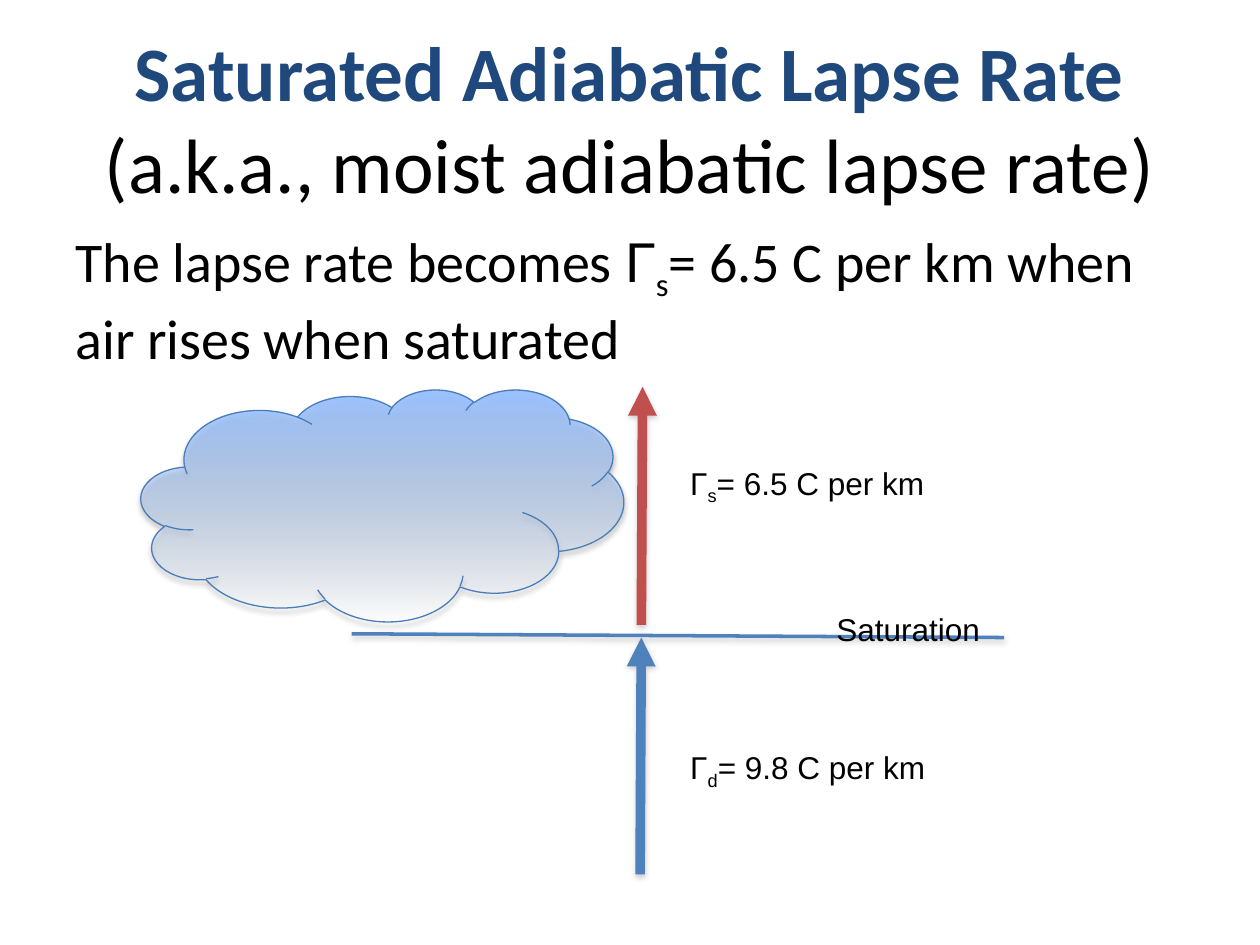
from lxml import etree
from pptx import Presentation
from pptx import util as u
from pptx.dml.color import RGBColor
from pptx.enum import shapes, text
from pptx.oxml.ns import qn

BLACK = RGBColor(0x00, 0x00, 0x00)
NAVY = RGBColor(0x1F, 0x49, 0x7D)
BLUE = RGBColor(0x4F, 0x81, 0xBD)
RED = RGBColor(0xC0, 0x50, 0x4D)
CLOUD_TOP = RGBColor(0x9B, 0xC1, 0xFF)
CLOUD_BASE = RGBColor(0xB9, 0xCD, 0xE5)
CLOUD_EDGE = RGBColor(0x4A, 0x7E, 0xBB)


def add_shadow(shape, colour, opacity, distance):
    """Soft shadow straight down; distance in points, opacity in percent."""
    effects = etree.SubElement(shape._element.spPr, qn("a:effectLst"))
    shadow = etree.SubElement(
        effects, qn("a:outerShdw"), blurRad=str(u.Pt(3.1)),
        dist=str(u.Pt(distance)), dir="5400000", rotWithShape="0")
    tint = etree.SubElement(shadow, qn("a:srgbClr"), val=str(colour))
    etree.SubElement(tint, qn("a:alpha"), val=str(opacity * 1000))


def add_text(slide, box, runs, frame_format, alignment=text.PP_ALIGN.LEFT):
    """Each run is (text, font values, baseline shift in percent)."""
    shape = slide.shapes.add_textbox(*map(u.Inches, box))
    for name, value in frame_format.items():
        setattr(shape.text_frame, name, value)
    paragraph = shape.text_frame.paragraphs[0]
    paragraph.alignment = alignment
    for index, (words, font_format, shift) in enumerate(runs):
        if words == "\n":
            paragraph.add_line_break()
            continue
        run = paragraph.add_run()
        run.text = words
        for name, value in font_format.items():
            if name == "colour":
                run.font.color.rgb = value
            else:
                setattr(run.font, name, value)
        if shift:
            run._r.get_or_add_rPr().set("baseline", str(shift * 1000))


def add_title(slide, box):
    font = {"name": "Calibri", "size": u.Pt(44)}
    runs = [
        ("Saturated Adiabatic Lapse Rate", {**font, "bold": True, "colour": NAVY}, 0),
        ("\n", {}, 0),
        ("(a.k.a., moist adiabatic lapse rate)", {**font, "colour": BLACK}, 0),
    ]
    frame_format = {"word_wrap": True, "vertical_anchor": text.MSO_ANCHOR.MIDDLE}
    add_text(slide, box, runs, frame_format, text.PP_ALIGN.CENTER)


def add_body(slide, box):
    font = {"name": "Calibri", "size": u.Pt(32), "colour": BLACK}
    runs = [
        ("The lapse rate becomes ", font, 0),
        ("Γ", {**font, "name": "Arial"}, 0),
        ("s", font, -25),
        ("= 6.5 C per km when air rises when saturated", font, 0),
    ]
    add_text(slide, box, runs, {"word_wrap": True})


def add_label(slide, box, *parts):
    """Parts alternate between plain text and subscript."""
    font = {"name": "Arial", "size": u.Pt(18), "colour": BLACK}
    runs = [(part, font, -25 * (index % 2)) for index, part in enumerate(parts)]
    add_text(slide, box, runs, {"word_wrap": False})


def add_line(slide, start, end, colour, width, arrow=False):
    line = slide.shapes.add_connector(
        shapes.MSO_CONNECTOR.STRAIGHT, *map(u.Inches, start + end))
    line.line.color.rgb = colour
    line.line.width = u.Pt(width)
    if arrow:
        etree.SubElement(line.line._get_or_add_ln(), qn("a:tailEnd"), type="triangle")
    add_shadow(line, RGBColor(0x80, 0x80, 0x80), 38, 1.6)


def add_cloud(slide, box):
    cloud = slide.shapes.add_shape(shapes.MSO_SHAPE.CLOUD, *map(u.Inches, box))
    cloud.fill.gradient()
    cloud.fill.gradient_angle = 270
    for stop, colour in zip(cloud.fill.gradient_stops, (CLOUD_TOP, CLOUD_BASE)):
        stop.color.rgb = colour
    # The base of the cloud fades out
    base = cloud._element.spPr.findall(".//" + qn("a:gs"))[-1][0]
    etree.SubElement(base, qn("a:alpha"), val="0")
    cloud.line.color.rgb = CLOUD_EDGE
    cloud.line.width = u.Pt(0.75)
    add_shadow(cloud, BLACK, 35, 1.8)


def add_diagram(slide, box):
    """Rising air below and above the saturation level."""
    left, top, width, height = box
    axis = left + 3.97
    level = top + 1.98
    label_left = left + 4.26
    # Dry and saturated ascent
    add_line(slide, (axis - 0.01, top + height), (axis, level + 0.01), BLUE, 5.5, True)
    add_line(slide, (axis, level - 0.09), (axis + 0.01, top), RED, 5.5, True)
    # Saturation level
    add_line(slide, (left + 1.67, level - 0.02), (left + width, level + 0.01), BLUE, 2)
    # Labels
    add_label(slide, (left + 5.42, level - 0.26, 1.35, 0.4), "Saturation")
    add_label(slide, (label_left, top + 0.56, 2.1, 0.71), "Γ", "s", "= 6.5 C per km")
    add_label(slide, (label_left, top + 2.82, 2.1, 0.71), "Γ", "d", "= 9.8 C per km")
    add_cloud(slide, (left, top + 0.02, 3.83, 1.84))


def main():
    presentation = Presentation()
    presentation.slide_width = u.Inches(10)
    presentation.slide_height = u.Inches(7.5)
    slide = presentation.slides.add_slide(presentation.slide_layouts[6])
    add_title(slide, (0.5, 0.3, 9, 1.25))
    add_body(slide, (0.5, 1.75, 9, 4.95))
    add_diagram(slide, (1.12, 3.07, 6.85, 3.87))
    presentation.save("out.pptx")


if __name__ == "__main__":
    main()
